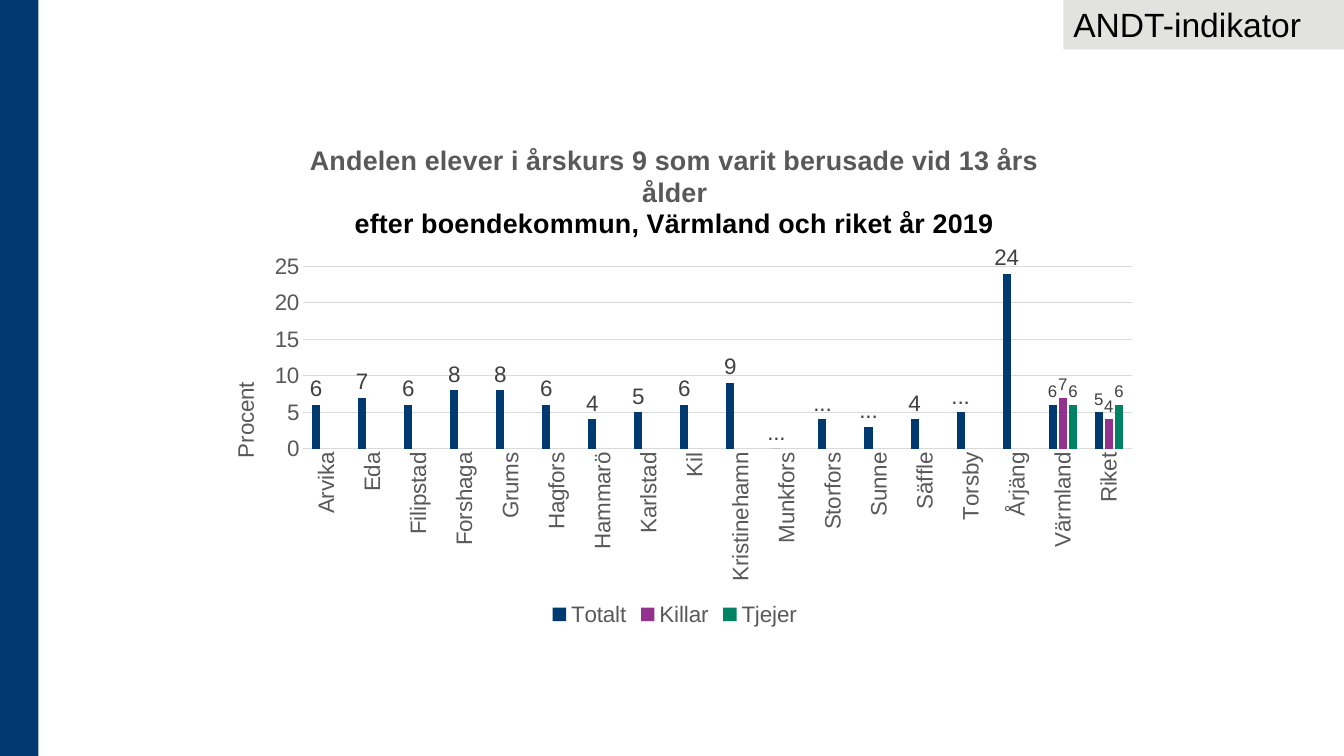
from dataclasses import dataclass

from lxml import etree
from pptx import Presentation
from pptx.chart.data import CategoryChartData
from pptx.dml.color import RGBColor
from pptx.enum.chart import (XL_CHART_TYPE, XL_LABEL_POSITION,
                             XL_LEGEND_POSITION, XL_TICK_MARK)
from pptx.enum.shapes import MSO_SHAPE
from pptx.enum.text import MSO_ANCHOR, PP_ALIGN
from pptx.oxml.ns import qn
from pptx.util import Pt

OUTSIDE_END = XL_LABEL_POSITION.OUTSIDE_END
NO_TICK = XL_TICK_MARK.NONE
BLANK_LAYOUT = 6


@dataclass(frozen=True)
class Theme:
    font: str = "Arial"
    navy: str = "003A70"
    purple: str = "93328E"
    green: str = "008264"
    tag_fill: str = "E2E2E1"
    grid: str = "D9D9D9"
    axis_text: str = "595959"
    label_text: str = "404040"
    black: str = "000000"
    tag_size: float = 24
    title_size: float = 19.2
    chart_size: float = 16
    small_size: float = 12


THEME = Theme()

MUNICIPALITIES = ["Arvika", "Eda", "Filipstad", "Forshaga", "Grums", "Hagfors",
                  "Hammarö", "Karlstad", "Kil", "Kristinehamn", "Munkfors",
                  "Storfors", "Sunne", "Säffle", "Torsby", "Årjäng"]
REGIONS = ["Värmland", "Riket"]
NO_VALUES = [None] * len(MUNICIPALITIES)
SERIES = [
    ("Totalt", [6, 7, 6, 8, 8, 6, 4, 5, 6, 9, 0, 4, 3, 4, 5, 24, 6, 5],
     THEME.navy, THEME.chart_size),
    ("Killar", NO_VALUES + [7, 4], THEME.purple, THEME.small_size),
    ("Tjejer", NO_VALUES + [6, 6], THEME.green, THEME.small_size),
]
HIDDEN_VALUES = ["Munkfors", "Storfors", "Sunne", "Torsby"]


def rgb(code):
    return RGBColor.from_string(code)


def style_font(font, size=THEME.chart_size, color=THEME.axis_text, bold=False):
    font.name = THEME.font
    font.size = Pt(size)
    font.bold = bold
    font.color.rgb = rgb(color)


def add_text(para, text, **style):
    span = para.add_run()
    span.text = text
    style_font(span.font, **style)


def add_block(page, left, top, width, height, color):
    box = page.shapes.add_shape(MSO_SHAPE.RECTANGLE, Pt(left), Pt(top),
                                Pt(width), Pt(height))
    box.shadow.inherit = False
    box.fill.solid()
    box.fill.fore_color.rgb = rgb(color)
    box.line.fill.background()
    return box


def add_tag(page, text):
    box = add_block(page, 759.6, -0.7, 200.4, 36, THEME.tag_fill)
    frame = box.text_frame
    frame.word_wrap = True
    frame.vertical_anchor = MSO_ANCHOR.MIDDLE
    para = frame.paragraphs[0]
    para.alignment = PP_ALIGN.LEFT
    add_text(para, text, size=THEME.tag_size, color=THEME.black)


def place(element, index, inner=False, **fractions):
    """Give a chart part a manual layout, in fractions of the chart."""
    for old in element.findall(qn("c:layout")):
        element.remove(old)
    layout = etree.Element(qn("c:layout"))
    manual = etree.SubElement(layout, qn("c:manualLayout"))
    settings = {"layoutTarget": "inner"} if inner else {}
    settings.update(xMode="edge", yMode="edge", **fractions)
    for name, value in settings.items():
        etree.SubElement(manual, qn("c:" + name)).set("val", str(value))
    element.insert(index, layout)


def style_axes(chart):
    categories, values = chart.category_axis, chart.value_axis
    for axis in (categories, values):
        axis.major_tick_mark = axis.minor_tick_mark = NO_TICK
        style_font(axis.tick_labels.font)
    body = categories._element.find(qn("c:txPr")).find(qn("a:bodyPr"))
    body.set("rot", "-5400000")
    body.set("vert", "horz")
    values.minimum_scale, values.maximum_scale, values.major_unit = 0, 25, 5
    values.tick_labels.number_format = "0"
    values.tick_labels.number_format_is_linked = False
    values.format.line.fill.background()
    values.has_major_gridlines = True
    for line in (categories.format.line, values.major_gridlines.format.line):
        line.color.rgb = rgb(THEME.grid)
        line.width = Pt(0.75)
    title = values.axis_title
    add_text(title.text_frame.paragraphs[0], "Procent")
    place(title._element, 1, x=0.03, y=0.5)


def style_series(series, color, label_size):
    series.format.fill.solid()
    series.format.fill.fore_color.rgb = rgb(color)
    series.invert_if_negative = False
    labels = series.data_labels
    labels.show_value = True
    labels.position = OUTSIDE_END
    labels.number_format = "0"
    labels.number_format_is_linked = False
    style_font(labels.font, size=label_size, color=THEME.label_text)


def mark_points(series, names):
    for index, name in enumerate(names):
        if name not in HIDDEN_VALUES + REGIONS:
            continue
        label = series.points[index].data_label
        if name in HIDDEN_VALUES:
            add_text(label.text_frame.paragraphs[0], "...",
                     color=THEME.label_text)
        else:
            style_font(label.font, size=THEME.small_size,
                       color=THEME.label_text)
        label.position = OUTSIDE_END


def add_chart_title(chart, lines):
    frame = chart.chart_title.text_frame
    for index, (text, color) in enumerate(lines):
        para = frame.add_paragraph() if index else frame.paragraphs[0]
        add_text(para, text, size=THEME.title_size, color=color, bold=True)
    chart.chart_title.include_in_layout = False


def add_column_chart(page):
    data = CategoryChartData(number_format="0")
    data.categories = MUNICIPALITIES + REGIONS
    for name, values, _, _ in SERIES:
        data.add_series(name, values)
    chart = page.shapes.add_chart(XL_CHART_TYPE.COLUMN_CLUSTERED, Pt(141.8),
                                  Pt(89.3), Pt(680.4), Pt(361.4), data).chart
    style_font(chart.font, color=THEME.black)
    add_chart_title(chart, [
        ("Andelen elever i årskurs 9 som varit berusade vid 13 års ålder",
         THEME.axis_text),
        ("efter boendekommun, Värmland och riket år 2019", THEME.black),
    ])
    style_axes(chart)
    plot = chart.plots[0]
    plot.gap_width, plot.overlap = 219, -27
    plot.vary_by_categories = False
    for series, (_, _, color, label_size) in zip(plot.series, SERIES):
        style_series(series, color, label_size)
    mark_points(plot.series[0], MUNICIPALITIES + REGIONS)
    chart.has_legend = True
    chart.legend.position = XL_LEGEND_POSITION.BOTTOM
    chart.legend.include_in_layout = False
    style_font(chart.legend.font)
    plot_area = chart._chartSpace.find(".//" + qn("c:plotArea"))
    place(plot_area, 0, inner=True, x=0.11, y=0.28, w=0.87, h=0.36)


def main():
    deck = Presentation()
    deck.slide_width, deck.slide_height = Pt(960), Pt(540)
    page = deck.slides.add_slide(deck.slide_layouts[BLANK_LAYOUT])
    add_block(page, 0, 0, 27.4, 540, THEME.navy)
    add_tag(page, "ANDT-indikator")
    add_column_chart(page)
    deck.save("out.pptx")


if __name__ == "__main__":
    main()
